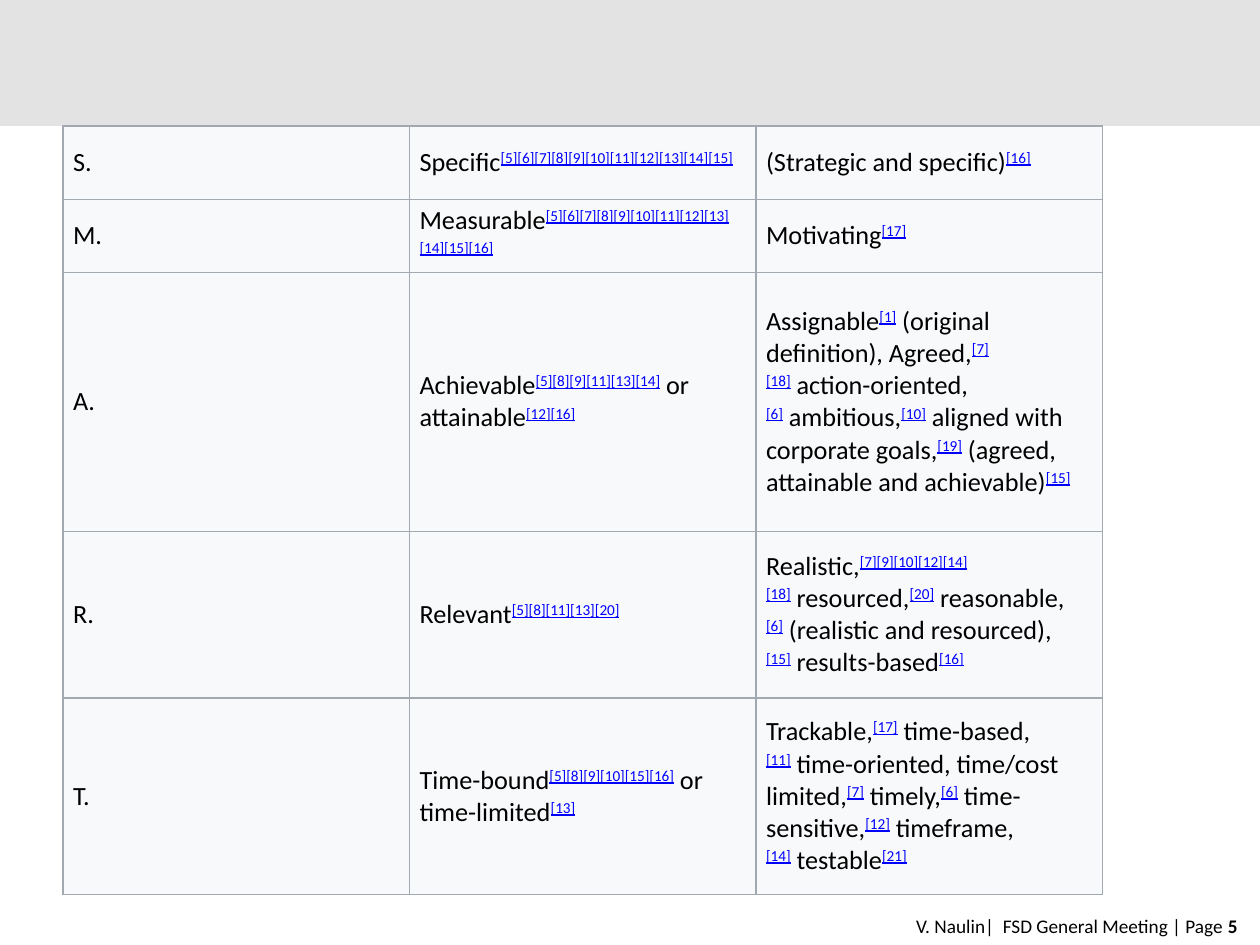
from pptx import Presentation
from pptx.dml.color import RGBColor
from pptx.enum.shapes import MSO_SHAPE
from pptx.enum.text import MSO_ANCHOR, PP_ALIGN
from pptx.oxml import parse_xml
from pptx.oxml.ns import nsdecls
from pptx.util import Pt

PX = 9144  # 100 px to the inch
NBSP = chr(160)
COLS = [275, 275, 275]
HEIGHTS = [58, 58, 206, 132, 156]
# Text and reference marks take turns, parted by "|".
ROWS = [
    ["S.",
     "Specific|[5][6][7][8][9][10][11][12][13][14][15]",
     "(Strategic and specific)|[16]"],
    ["M.",
     "Measurable|[5][6][7][8][9][10][11][12][13][14][15][16]",
     "Motivating|[17]"],
    ["A.",
     "Achievable|[5][8][9][11][13][14]|or attainable|[12][16]",
     "Assignable|[1]|(original definition), Agreed,|[7][18]|action-oriented,|[6]"
     "|ambitious,|[10]|aligned with corporate goals,|[19]"
     "|(agreed, attainable and achievable)|[15]"],
    ["R.",
     "Relevant|[5][8][11][13][20]",
     "Realistic,|[7][9][10][12][14][18]|resourced,|[20]|reasonable,|[6]"
     "|(realistic and resourced),|[15]|results-based|[16]"],
    ["T.",
     "Time-bound|[5][8][9][10][15][16]|or time-limited|[13]",
     "Trackable,|[17]|time-based,|[11]|time-oriented, time/cost limited,|[7]"
     "|timely,|[6]|time-sensitive,|[12]|timeframe,|[14]|testable|[21]"],
]


def color(text):
    return RGBColor.from_string(text)


def add_run(para, text, hue="000000", **form):
    run = para.add_run()
    run.text = text
    run.font.color.rgb = color(hue)
    for name, value in {"name": "Calibri", **form}.items():
        setattr(run.font, name, value)
    return run


deck = Presentation()
deck.slide_width, deck.slide_height = 1000 * PX, 750 * PX
slide = deck.slides.add_slide(deck.slide_layouts[6])

band = slide.shapes.add_shape(MSO_SHAPE.RECTANGLE, 0, 0, 1000 * PX, 100 * PX)
band.shadow.inherit = False
band.fill.solid()
band.fill.fore_color.rgb = color("E3E3E3")
band.line.fill.background()

foot = slide.shapes.add_textbox(91 * PX, 721 * PX, 901 * PX, 29 * PX).text_frame
foot.word_wrap = True
para = foot.paragraphs[0]
para.alignment = PP_ALIGN.RIGHT
add_run(para, "V. Naulin|  FSD General Meeting | Page ", size=Pt(11))
add_run(para, "5", size=Pt(11), bold=True)

table = slide.shapes.add_table(
    len(ROWS), len(COLS), 50 * PX, 100 * PX, sum(COLS) * PX, sum(HEIGHTS) * PX
).table
table.first_row = table.horz_banding = False
for col, width in zip(table.columns, COLS):
    col.width = width * PX
for row, height in zip(table.rows, HEIGHTS):
    row.height = height * PX

look = {
    "vertical_anchor": MSO_ANCHOR.MIDDLE,
    "margin_left": 8 * PX, "margin_right": 8 * PX,
    "margin_top": 4 * PX, "margin_bottom": 4 * PX,
}
for row, texts in zip(table.rows, ROWS):
    for cell, text in zip(row.cells, texts):
        for name, value in look.items():
            setattr(cell, name, value)
        para = cell.text_frame.paragraphs[0]
        for i, part in enumerate(text.split("|")):
            if i % 2:
                mark = add_run(para, part, "0000FF", size=Pt(15), underline=True)
                mark._r.get_or_add_rPr().set("baseline", "30000")
            else:
                add_run(para, NBSP + part if i else part, size=Pt(15))
        props = cell._tc.get_or_add_tcPr()
        for side in ("lnL", "lnR", "lnT", "lnB"):
            props.append(parse_xml(
                f'<a:{side} {nsdecls("a")} w="{Pt(0.75)}"><a:solidFill>'
                f'<a:srgbClr val="A2A9B1"/></a:solidFill></a:{side}>'))
        cell.fill.solid()
        cell.fill.fore_color.rgb = color("F8F9FA")

deck.save("out.pptx")
